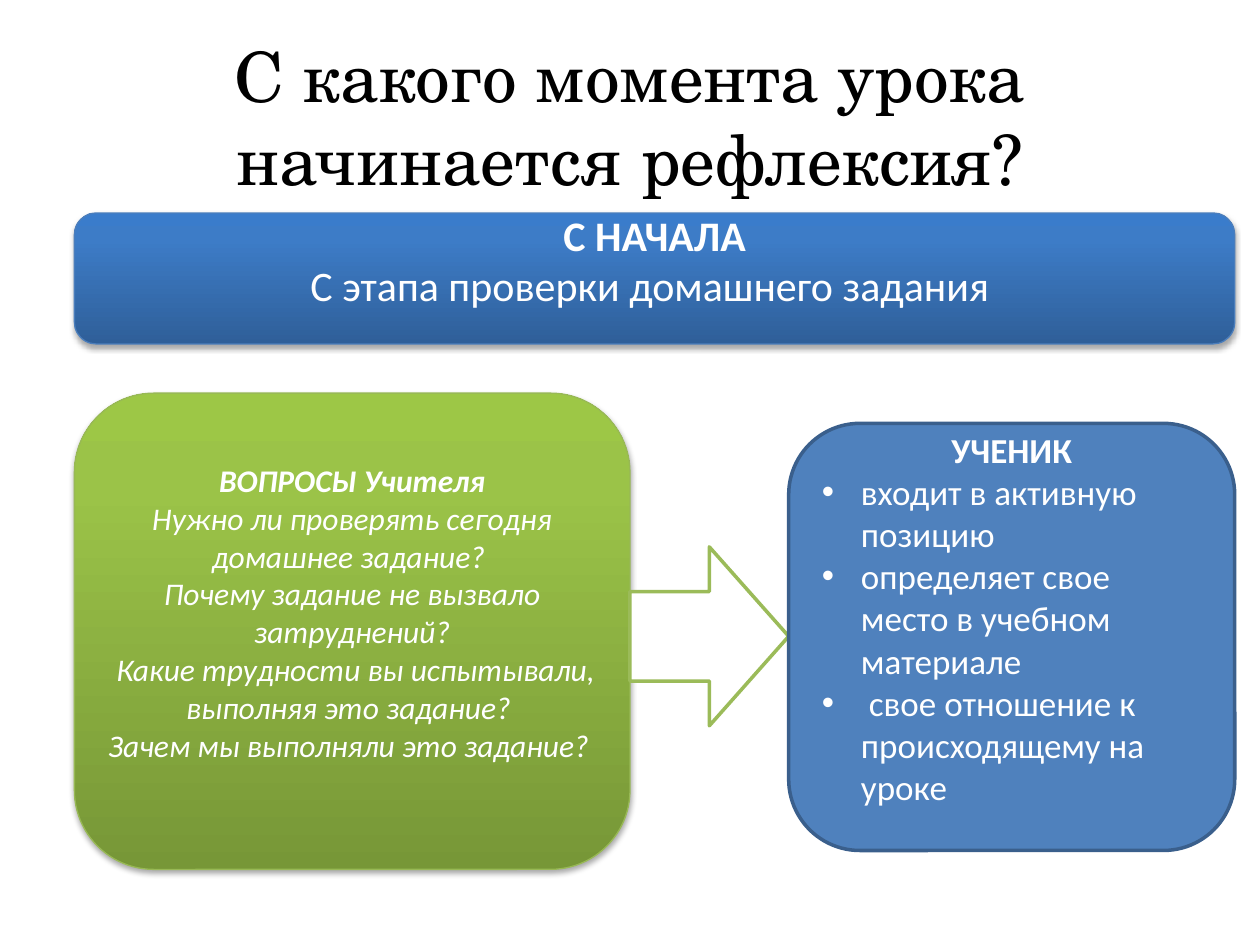
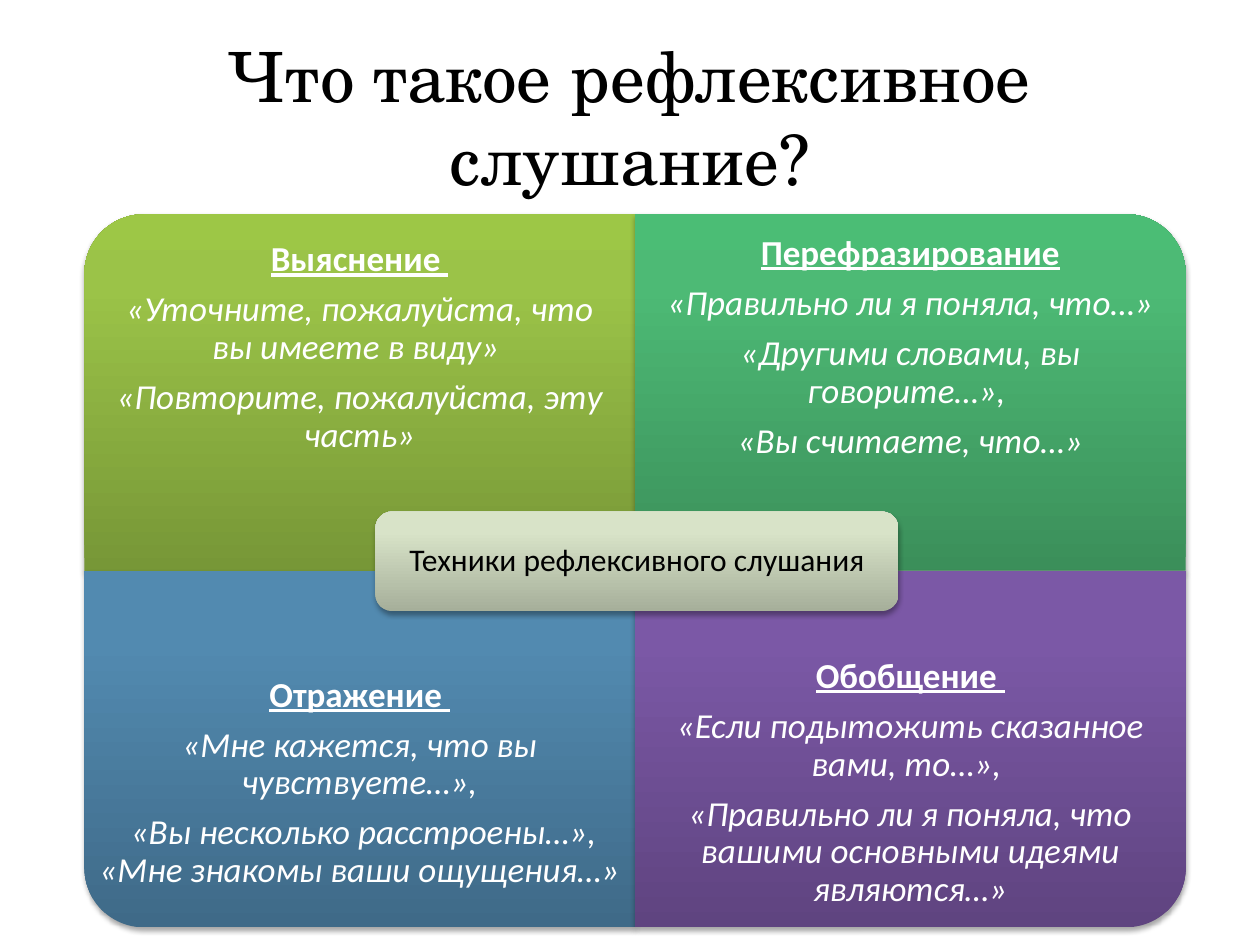
from dataclasses import dataclass

from lxml import etree
from pptx import Presentation
from pptx.dml.color import RGBColor
from pptx.enum.shapes import MSO_SHAPE
from pptx.enum.text import MSO_ANCHOR, MSO_AUTO_SIZE, PP_ALIGN
from pptx.oxml.ns import qn
from pptx.util import Inches, Pt

ROUNDED = MSO_SHAPE.ROUNDED_RECTANGLE
ONE_ROUND_CORNER = MSO_SHAPE.ROUND_1_RECTANGLE
ARROW = MSO_SHAPE.RIGHT_ARROW
CENTER, LEFT = PP_ALIGN.CENTER, PP_ALIGN.LEFT
MIDDLE = MSO_ANCHOR.MIDDLE


@dataclass(frozen=True)
class Theme:
    title_font: str = "TeX Gyre Schola"
    body_font: str = "Calibri"
    title_size: float = 39.6
    banner_size: int = 24
    body_size: int = 20
    small_size: int = 18
    black: str = "000000"
    white: str = "FFFFFF"
    # Gradients run from the bottom edge to the top edge.
    blue: tuple = ("2F5F99", "3D7CC7", "3A7CCB")
    green: tuple = ("779737", "9BC348", "9DC746")
    emerald: tuple = ("3B8F5A", "4DBA75", "4BBD75")
    steel: tuple = ("3F6A88", "528AB0", "518BB3")
    purple: tuple = ("5F4480", "7B58A6", "7C57A8")
    sage: tuple = ("A6AF9A", "D8E3C8", "D9E4C8")
    stops: tuple = (0, 80000, 100000)
    flat_blue: str = "4F81BD"
    blue_edge: str = "4B7EBC"
    green_edge: str = "98B955"
    arrow_edge: str = "9BBB59"
    dark_edge: str = "3A5F8C"


THEME = Theme()


def add_card(page, kind, area, fill, edge=None, edge_width=0.75):
    """Add a shape; a tuple as fill gives a shadowed gradient, a string a flat colour."""
    card = page.shapes.add_shape(kind, *(Inches(length) for length in area))
    card.shadow.inherit = False
    if edge:
        card.line.color.rgb = RGBColor.from_string(edge)
        card.line.width = Pt(edge_width)
    else:
        card.line.fill.background()
    if isinstance(fill, str):
        card.fill.solid()
        card.fill.fore_color.rgb = RGBColor.from_string(fill)
        return card

    card.fill.gradient()
    card.fill.gradient_angle = 90
    properties = card._element.spPr
    gradient = properties.find(qn("a:gradFill"))
    gradient.set("rotWithShape", "0")
    stop_list = gradient.find(qn("a:gsLst"))
    for stop in list(stop_list):
        stop_list.remove(stop)
    for position, color in zip(THEME.stops, fill):
        stop = etree.SubElement(stop_list, qn("a:gs"), pos=str(position))
        etree.SubElement(stop, qn("a:srgbClr"), val=color)

    shadow = etree.SubElement(
        properties.find(qn("a:effectLst")), qn("a:outerShdw"),
        blurRad=str(Pt(3.1)), dist=str(Pt(1.8)), dir="5400000", rotWithShape="0")
    shadow_color = etree.SubElement(shadow, qn("a:srgbClr"), val=THEME.black)
    etree.SubElement(shadow_color, qn("a:alpha"), val="35000")
    return card


def write(box, lines, size, heading, body, margins, color=THEME.white, tight=False):
    """Fill a box; heading and body are style letters: b bold, i italic, u underlined."""
    frame = box.text_frame
    frame.text = "\n".join(lines)
    frame.word_wrap = True
    frame.vertical_anchor = MIDDLE
    (frame.margin_left, frame.margin_top,
     frame.margin_right, frame.margin_bottom) = (Inches(margin) for margin in margins)
    for number, para in enumerate(frame.paragraphs):
        style = body if number else heading
        para.alignment = CENTER
        if tight:
            para.line_spacing = 0.9
            para.space_after = Pt(7)
        for span in para.runs:
            span.font.name = THEME.body_font
            span.font.size = Pt(size)
            span.font.color.rgb = RGBColor.from_string(color)
            span.font.bold = "b" in style
            span.font.italic = "i" in style
            span.font.underline = "u" in style


deck = Presentation()
deck.slide_width, deck.slide_height = Inches(10), Inches(7.5)
title_only = deck.slide_layouts[5]

# Titles
pages = []
for heading in ("С какого момента урока начинается рефлексия?",
                "Что такое рефлексивное слушание?"):
    page = deck.slides.add_slide(title_only)
    title = page.shapes.title
    title.left, title.top = Inches(0.5), Inches(0.3)
    title.width, title.height = Inches(9), Inches(1.25)
    frame = title.text_frame
    frame.text = heading
    frame.auto_size = MSO_AUTO_SIZE.NONE
    frame.vertical_anchor = MIDDLE
    frame.paragraphs[0].alignment = CENTER
    font = frame.paragraphs[0].runs[0].font
    font.name, font.size = THEME.title_font, Pt(THEME.title_size)
    font.color.rgb = RGBColor.from_string(THEME.black)
    pages.append(page)
lesson_page, listening_page = pages

# Start of the lesson: banner, then teacher -> pupil
left, teacher_right, pupil_left, right = 0.59, 5, 6.26, 9.8

banner = add_card(lesson_page, ROUNDED, (left, 1.69, right - left, 1.04),
                  THEME.blue, THEME.blue_edge)
write(banner, ["С НАЧАЛА", "С этапа проверки домашнего задания "],
      THEME.banner_size, "b", "", (0.1, 0.05, 0.1, 0.35))

teacher = add_card(lesson_page, ROUNDED, (left, 3.12, teacher_right - left, 3.78),
                   THEME.green, THEME.green_edge)
write(teacher, [
    "ВОПРОСЫ Учителя",
    "Нужно ли проверять сегодня домашнее задание? ",
    "Почему задание не вызвало затруднений?",
    " Какие трудности вы испытывали, выполняя это задание? ",
    "Зачем мы выполняли это задание? ",
], THEME.small_size, "bi", "i", (0.04, 0.05, 0.04, 0.35))

add_card(lesson_page, ARROW, (teacher_right, 4.34, pupil_left - teacher_right, 1.42),
         THEME.white, THEME.arrow_edge, 2)

pupil = add_card(lesson_page, ROUNDED, (pupil_left, 3.36, right - pupil_left, 3.39),
                 THEME.flat_blue, THEME.dark_edge, 2)
write(pupil, [
    "УЧЕНИК",
    "входит в активную позицию",
    "определяет свое место в учебном материале",
    " свое отношение к происходящему на уроке",
], THEME.body_size, "b", "", (0.1, 0.05, 0.1, 0.35))
for para in pupil.text_frame.paragraphs[1:]:
    para.alignment = LEFT
    settings = para._p.get_or_add_pPr()
    settings.set("marL", str(Inches(0.31)))
    settings.set("indent", str(Inches(-0.31)))
    etree.SubElement(settings, qn("a:buFont"), typeface="Arial")
    etree.SubElement(settings, qn("a:buChar"), char="•")

# Reflective listening: a two by two grid of techniques
grid_left, grid_top = 0.67, 1.7
tile_width, tile_height = 4.37, 2.83
upper_margins, lower_margins = (0.16,) * 4, (0.08, 0, 0.08, 0.16)
techniques = [
    (0, 0, 270, THEME.green, [
        "Выяснение ",
        "«Уточните, пожалуйста, что вы имеете в виду» ",
        "«Повторите, пожалуйста, эту часть»"]),
    (1, 0, 0, THEME.emerald, [
        "Перефразирование",
        "«Правильно ли я поняла, что…»",
        "«Другими словами, вы говорите…», ",
        "«Вы считаете, что…»"]),
    (0, 1, 180, THEME.steel, [
        "Отражение ",
        "«Мне кажется, что вы чувствуете…»,",
        " «Вы несколько расстроены…», «Мне знакомы ваши ощущения…»"]),
    (1, 1, 90, THEME.purple, [
        "Обобщение ",
        "«Если подытожить сказанное вами, то…», ",
        "«Правильно ли я поняла, что вашими основными идеями являются…»"]),
]
for column, row, turn, colors, lines in techniques:
    x = grid_left + column * tile_width
    y = grid_top + row * tile_height
    # A quarter turn swaps the sides around the same centre.
    swap = (tile_width - tile_height) / 2 if turn % 180 else 0
    tile = add_card(listening_page, ONE_ROUND_CORNER,
                    (x + swap, y - swap, tile_width - 2 * swap, tile_height + 2 * swap),
                    colors)
    tile.rotation = turn
    label = listening_page.shapes.add_textbox(
        Inches(x), Inches(y + row * tile_height / 4),
        Inches(tile_width), Inches(tile_height * 3 / 4))
    write(label, lines, THEME.body_size, "bu", "i",
          lower_margins if row else upper_margins, tight=True)

hub = add_card(listening_page, ROUNDED, (2.98, 4.06, 4.15, 0.79), THEME.sage)
write(hub, ["Техники рефлексивного слушания"], THEME.small_size, "", "",
      (0.07,) * 4, THEME.black, tight=True)

deck.save("out.pptx")
